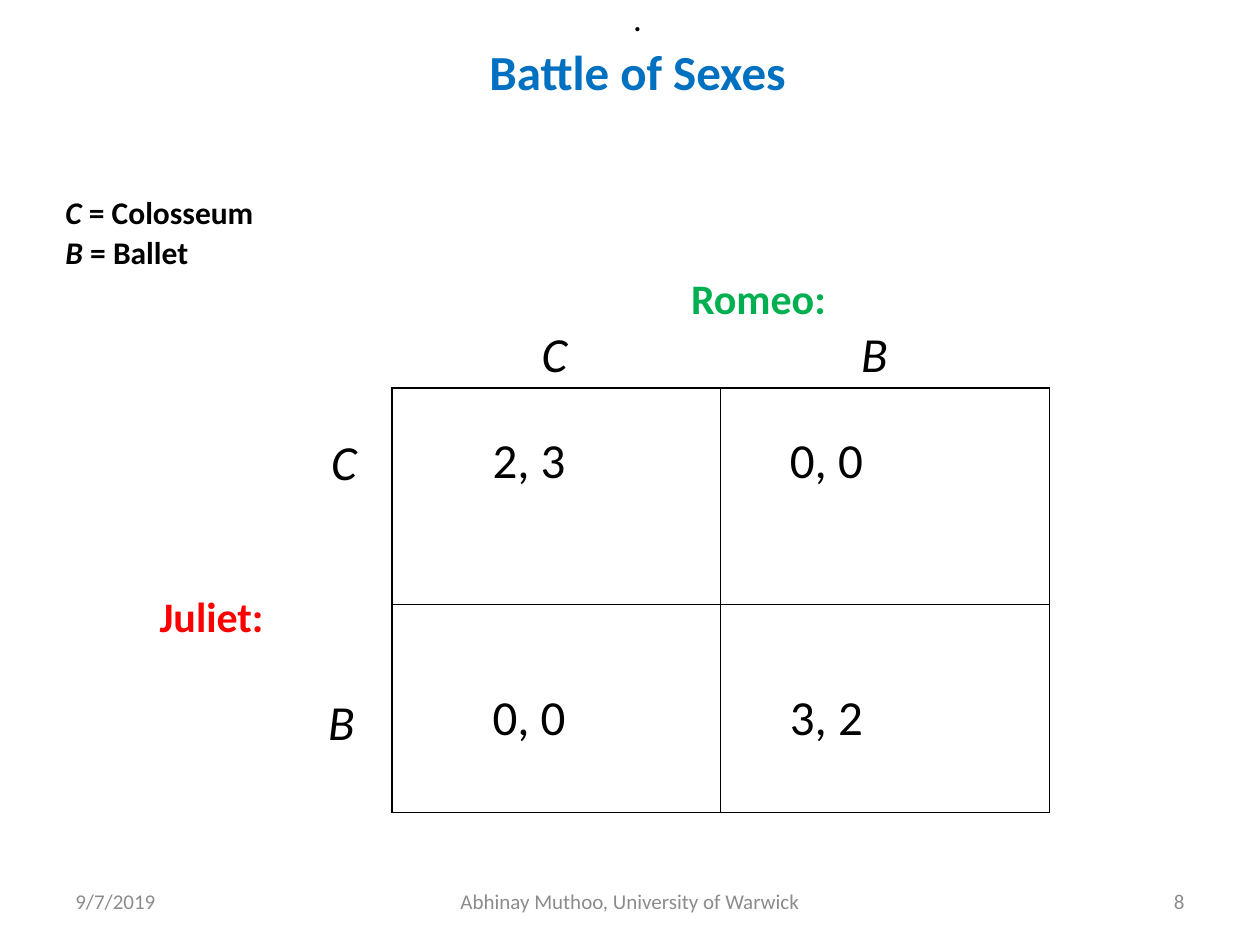
from lxml import etree
from pptx import Presentation
from pptx.dml.color import RGBColor
from pptx.enum.text import MSO_ANCHOR, PP_ALIGN
from pptx.oxml.ns import qn
from pptx.util import Inches, Pt

LEFT, CENTER, RIGHT = PP_ALIGN.LEFT, PP_ALIGN.CENTER, PP_ALIGN.RIGHT
MIDDLE, TOP = MSO_ANCHOR.MIDDLE, MSO_ANCHOR.TOP
TITLE_ONLY = 5
COLUMNS, ROWS = 100, 75
BLACK, BLUE, GREEN, RED, GREY = "000000", "0070C0", "00B050", "FF0000", "8C8C8C"


def color(hex_code):
    return RGBColor.from_string(hex_code)


class GameSlide:
    font_name = "Calibri"

    def __init__(self, deck):
        self.column = deck.slide_width / COLUMNS
        self.row = deck.slide_height / ROWS
        self.slide = deck.slides.add_slide(deck.slide_layouts[TITLE_ONLY])

    def x(self, columns):
        return round(columns * self.column)

    def y(self, rows):
        return round(rows * self.row)

    def box(self, center_x, center_y, width, height):
        return (self.x(center_x - width / 2), self.y(center_y - height / 2),
                self.x(width), self.y(height))

    def style(self, paragraph, size, fill=BLACK, bold=False, italic=False, align=LEFT):
        paragraph.alignment = align
        font = paragraph.font
        font.name, font.size, font.bold = self.font_name, Pt(size), bold
        if italic is not None:
            font.italic = italic
        font.color.rgb = color(fill)

    def frame(self, shape, margin=0):
        frame = shape.text_frame
        frame.word_wrap = True
        frame.vertical_anchor = MIDDLE
        frame.margin_left = frame.margin_right = self.x(margin)
        frame.margin_top = frame.margin_bottom = 0
        return frame

    def title(self, text, place):
        heading = self.slide.shapes.title
        heading.left, heading.top, heading.width, heading.height = self.box(*place)
        frame = self.frame(heading)
        frame.text = text
        self.style(frame.paragraphs[0], 28, BLUE, bold=True, align=CENTER)

    def label(self, text, place, size, margin=0, **look):
        frame = self.frame(self.slide.shapes.add_textbox(*self.box(*place)), margin)
        frame.text = text
        self.style(frame.paragraphs[0], size, **look)

    def legend(self, entries, place):
        frame = self.frame(self.slide.shapes.add_textbox(*self.box(*place)))
        for index, (symbol, meaning) in enumerate(entries):
            entry = frame.add_paragraph() if index else frame.paragraphs[0]
            if index:
                entry.space_before = Pt(1)
            key = entry.add_run()
            key.text, key.font.italic = symbol, True
            entry.add_run().text = f" = {meaning}"
            self.style(entry, 18, bold=True, italic=None)

    def border(self, cell):
        properties = cell._tc.get_or_add_tcPr()
        for side in ("a:lnL", "a:lnR", "a:lnT", "a:lnB"):
            line = etree.SubElement(properties, qn(side), w=str(Pt(1)))
            fill = etree.SubElement(line, qn("a:solidFill"))
            etree.SubElement(fill, qn("a:srgbClr"), val=BLACK)

    def payoffs(self, values, left, top, widths, heights, insets_x, insets_y):
        table = self.slide.shapes.add_table(
            len(heights), len(widths), self.x(left), self.y(top),
            self.x(sum(widths)), self.y(sum(heights))).table
        table.first_row = table.horz_banding = False
        for column, width in zip(table.columns, widths):
            column.width = self.x(width)
        for row, height, inset_y, row_values in zip(table.rows, heights, insets_y, values):
            row.height = self.y(height)
            for cell, inset_x, payoff in zip(row.cells, insets_x, row_values):
                cell.text = payoff
                cell.vertical_anchor = TOP
                cell.margin_left, cell.margin_top = self.x(inset_x), self.y(inset_y)
                self.style(cell.text_frame.paragraphs[0], 28)
                self.border(cell)
                cell.fill.background()


def main():
    deck = Presentation()
    deck.slide_width, deck.slide_height = Inches(10), Inches(7.5)
    game = GameSlide(deck)

    game.title("Battle of Sexes", (50.6, 5.6, 90, 5))
    game.label(".", (50.6, 1.4, 10, 3.4), 20, align=CENTER)
    game.legend([("C", "Colosseum"), ("B", "Ballet")], (17.7, 18.4, 25, 6.4))

    for player, x, y, fill in [("Romeo:", 60.2, 23.6, GREEN), ("Juliet:", 16.8, 48.9, RED)]:
        game.label(player, (x, y, 16, 4), 24, fill=fill, bold=True, align=CENTER)
    for strategy, x, y in [("C", 44, 28), ("B", 69.4, 28), ("C", 27.3, 36.6), ("B", 27.1, 57.2)]:
        game.label(strategy, (x, y, 5, 5), 28, italic=True, align=CENTER)

    game.payoffs([["2, 3", "0, 0"], ["0, 0", "3, 2"]], left=31.1, top=30.8,
                 widths=[26.1, 26.1], heights=[17.2, 16.5],
                 insets_x=[8, 5.5], insets_y=[3.5, 6.7])

    for text, x, width, align in [
            ("9/7/2019", 16.65, 23.3, LEFT),
            ("Abhinay Muthoo, University of Warwick", 50, 31.7, CENTER),
            ("8", 83.35, 23.3, RIGHT)]:
        game.label(text, (x, 71.5, width, 4), 12, margin=1, fill=GREY, align=align)

    deck.save("out.pptx")


if __name__ == "__main__":
    main()
